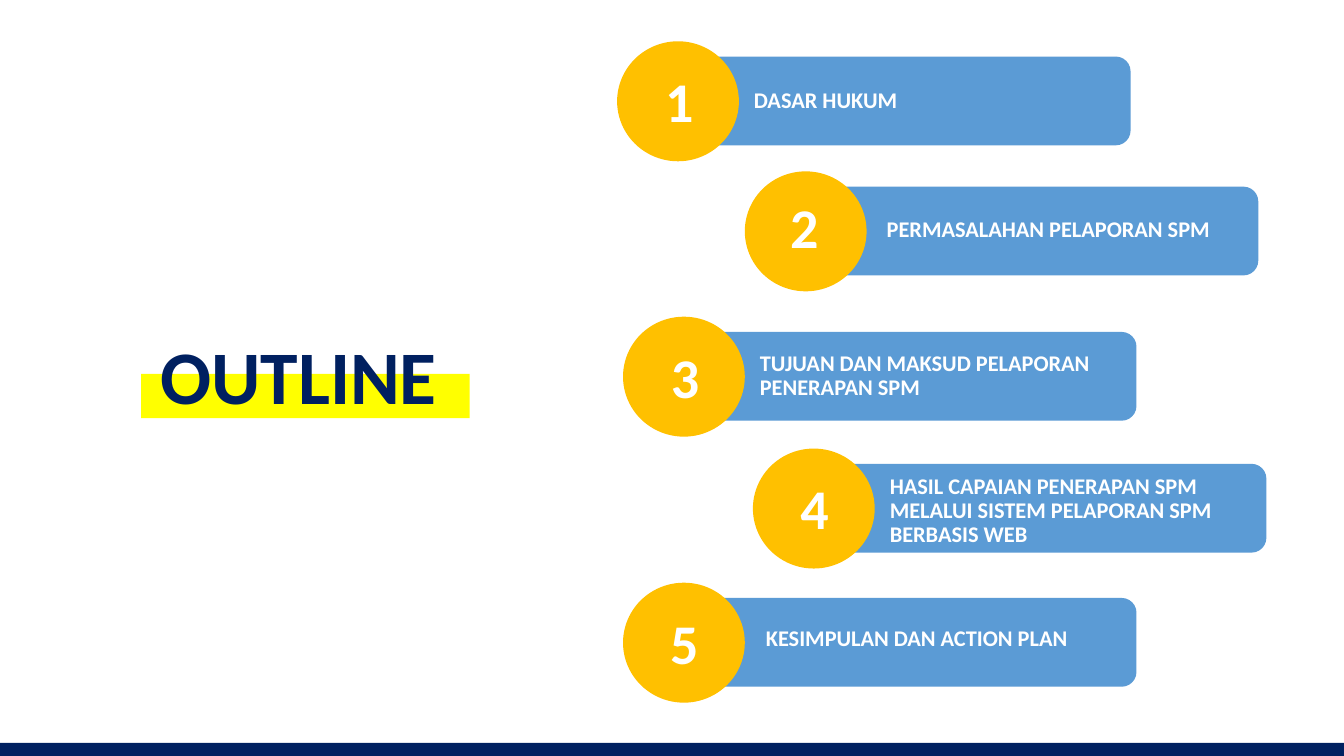
from pptx import Presentation
from pptx.dml.color import RGBColor
from pptx.enum.shapes import MSO_SHAPE
from pptx.enum.text import MSO_ANCHOR, PP_ALIGN
from pptx.util import Pt

RECT, ROUNDED, OVAL = MSO_SHAPE.RECTANGLE, MSO_SHAPE.ROUNDED_RECTANGLE, MSO_SHAPE.OVAL
TOP, MIDDLE = MSO_ANCHOR.TOP, MSO_ANCHOR.MIDDLE
LEFT = PP_ALIGN.LEFT

COLORS = {"navy": "002060", "yellow": "FFFF00", "blue": "5B9BD5",
          "gold": "FFC000", "white": "FFFFFF"}
FONT = "Calibri"
SLIDE_W, SLIDE_H = 960, 540

# label, circle left and top, number offset, label left and middle offset
ITEMS = [
    ("DASAR HUKUM", (440.8, 29.5), (27.2, 20.2), (90.7, 42.5)),
    ("PERMASALAHAN PELAPORAN SPM", (532, 122.4), (25.2, 17.3), (94.3, 41.8)),
    ("TUJUAN DAN MAKSUD PELAPORAN PENERAPAN SPM",
     (445, 226.2), (27.2, 20.7), (90.7, 42.8)),
    ("HASIL CAPAIAN PENERAPAN SPM MELALUI SISTEM PELAPORAN SPM BERBASIS WEB",
     (537.8, 320.4), (26.8, 19.5), (90.7, 45)),
    ("KESIMPULAN DAN ACTION PLAN", (445, 416.2), (26.6, 20.2), (95, 40.3)),
]


def add_block(shapes, kind, box, color):
    sp = shapes.add_shape(kind, *map(Pt, box))
    sp.shadow.inherit = False
    sp.fill.solid()
    sp.fill.fore_color.rgb = RGBColor.from_string(COLORS[color])
    sp.line.fill.background()
    return sp


def write(sp, text, size, color, anchor, wrap=True, spacing=0.9):
    tf = sp.text_frame
    tf.word_wrap = wrap
    tf.vertical_anchor = anchor
    tf.margin_left = tf.margin_right = Pt(7.2)
    tf.margin_top = tf.margin_bottom = Pt(3.6)
    p = tf.paragraphs[0]
    p.text = text
    p.alignment = LEFT
    p.line_spacing = spacing
    p.font.name, p.font.size, p.font.bold = FONT, Pt(size), True
    p.font.color.rgb = RGBColor.from_string(COLORS[color])


def add_heading(s, left, top):
    add_block(s.shapes, RECT, (left, top + 36, 234.7, 31.5), "yellow")
    title = s.shapes.title
    title.left, title.top = Pt(left + 6.5), Pt(top)
    title.width, title.height = Pt(273), Pt(72.7)
    write(title, "OUTLINE", 54, "navy", TOP, spacing=1)
    s.shapes._spTree.append(title._element)  # in front of the highlight


def add_item(s, number, label, origin, number_offset, label_offset):
    left, top = origin
    group = s.shapes.add_group_shape()
    group.name = f"Item {number}"
    add_block(group.shapes, ROUNDED, (left + 42.8, top + 10.9, 324, 63.4), "blue")
    add_block(group.shapes, OVAL, (left, top, 87, 85.7), "gold")

    dx, dy = number_offset
    box = group.shapes.add_textbox(Pt(left + dx), Pt(top + dy), Pt(35.3), Pt(51))
    write(box, str(number), 40, "white", TOP, wrap=False)

    dx, middle = label_offset
    box = group.shapes.add_textbox(Pt(left + dx), Pt(top + middle - 30), Pt(272), Pt(60))
    write(box, label, 16, "white", MIDDLE)


def build_outline(prs):
    s = prs.slides.add_slide(prs.slide_layouts[5])
    add_block(s.shapes, RECT, (0, 530.6, SLIDE_W, SLIDE_H - 530.6), "navy")
    add_heading(s, 100.8, 231.1)
    for number, item in enumerate(ITEMS, 1):
        add_item(s, number, *item)


def main():
    prs = Presentation()
    prs.slide_width, prs.slide_height = Pt(SLIDE_W), Pt(SLIDE_H)
    build_outline(prs)
    prs.save("out.pptx")


if __name__ == "__main__":
    main()
